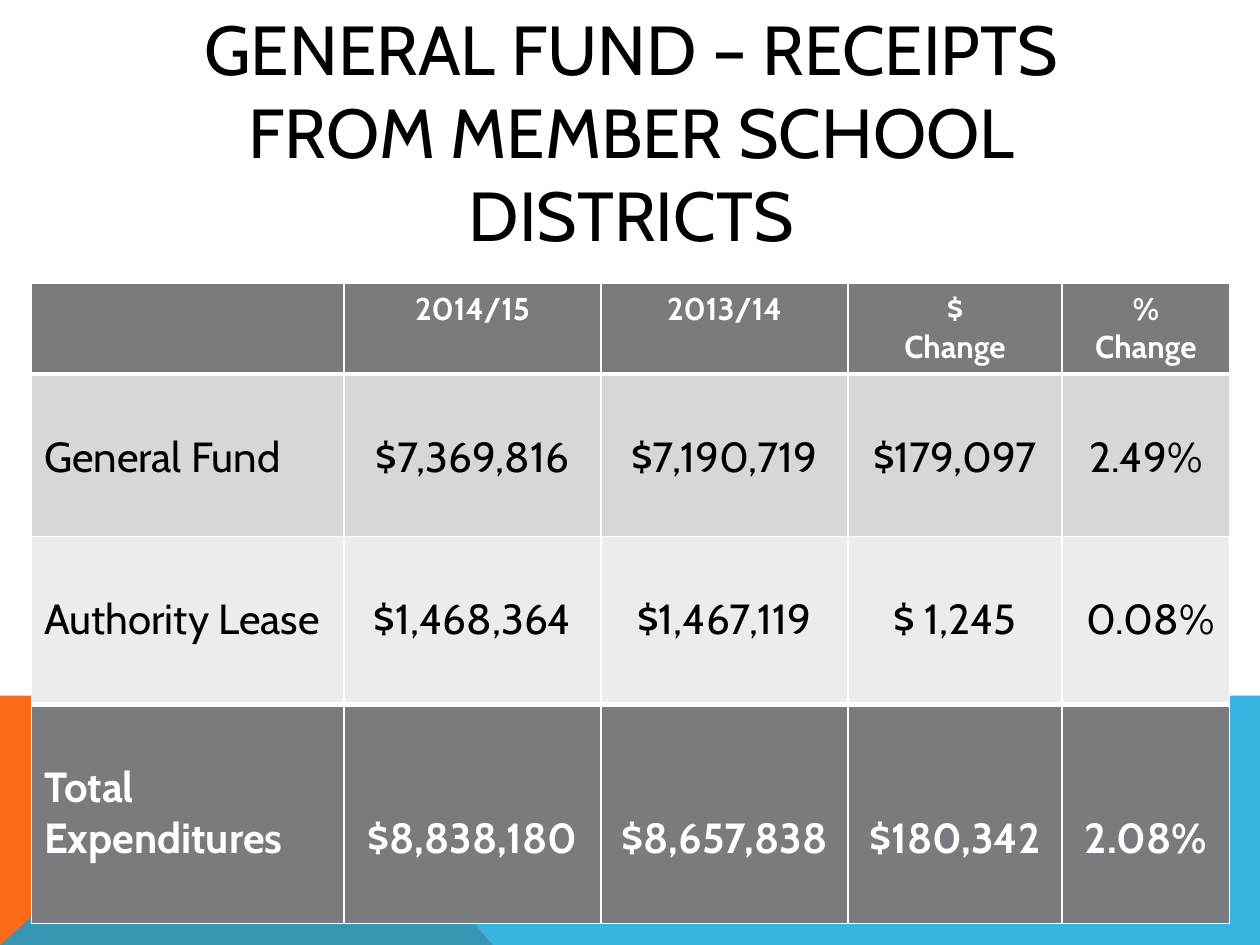
"""Build the slide on general fund receipts from member school districts."""
from lxml.etree import SubElement
from pptx import Presentation
from pptx.dml.color import RGBColor
from pptx.enum.text import MSO_ANCHOR, MSO_AUTO_SIZE, PP_ALIGN
from pptx.oxml.ns import qn
from pptx.util import Inches, Pt

FONT = "Cabin"
BLACK = RGBColor(0x00, 0x00, 0x00)
WHITE = RGBColor(0xFF, 0xFF, 0xFF)
ORANGE = RGBColor(0xF9, 0x6A, 0x1B)
BLUE = RGBColor(0x08, 0xA1, 0xD9)
DARK_GRAY = RGBColor(0x79, 0x7B, 0x7E)
MID_GRAY = RGBColor(0xD7, 0xD7, 0xD8)
LIGHT_GRAY = RGBColor(0xEC, 0xEC, 0xEC)

WIDTH, HEIGHT = 10, 7.5
BAND_TOP, BAND_PEAK, BAND_FOOT = 5.52, 2.23, 3.91
COLUMN_WIDTHS = [2.48, 2.04, 1.96, 1.7, 1.33]
ROW_HEIGHTS = [0.72, 1.29, 1.33, 1.74]
ROW_FILLS = [DARK_GRAY, MID_GRAY, LIGHT_GRAY, DARK_GRAY]
CELL_MARGIN, LINE_HEIGHT = 0.05, 0.405
RECEIPTS = [
    ["", "2014/15", "2013/14", "$\nChange", "%\nChange"],
    ["General Fund", "$7,369,816", "$7,190,719", "$179,097", "2.49%"],
    ["Authority Lease", "$1,468,364", "$1,467,119", "$ 1,245", " 0.08%"],
    ["Total Expenditures", "$8,838,180", "$8,657,838", "$180,342", "2.08%"],
]


def write_text(frame, text, size, color, bold=False, align=PP_ALIGN.CENTER):
    """Write text into a frame, one paragraph a line, in one format."""
    frame.text = text
    for paragraph in frame.paragraphs:
        paragraph.alignment = align
        font = paragraph.font
        for run in paragraph.runs:
            font = run.font
            font.name, font.size, font.bold = FONT, Pt(size), bold
            font.color.rgb = color


def add_band(slide, points, color, opacity=100):
    """Add a borderless polygon through points given in inches."""
    start, *others = [(Inches(x), Inches(y)) for x, y in points]
    builder = slide.shapes.build_freeform(*start)
    builder.add_line_segments(others, close=True)
    shape = builder.convert_to_shape()
    shape.shadow.inherit = False
    shape.line.fill.background()
    shape.fill.solid()
    shape.fill.fore_color.rgb = color
    if opacity < 100:
        color_element = shape.fill._xPr.find(qn("a:solidFill"))[0]
        SubElement(color_element, qn("a:alpha"), val=str(opacity * 1000))


def add_borders(cell, **widths):
    """Draw white borders on a cell, 1 point wide unless given by side."""
    properties = cell._tc.get_or_add_tcPr()
    for side in "LRTB":
        width = Pt(widths.get(side, 1))
        line = SubElement(properties, qn(f"a:ln{side}"), w=str(width))
        fill = SubElement(line, qn("a:solidFill"))
        SubElement(fill, qn("a:srgbClr"), val=str(WHITE))


def format_cell(cell, text, row, column):
    """Fill one cell and format it by its row and column."""
    last = len(RECEIPTS) - 1
    strong = row in (0, last)
    add_borders(cell, B=3 if row in (0, last - 1) else 1,
                T=3 if row in (1, last) else 1)
    cell.fill.solid()
    cell.fill.fore_color.rgb = ROW_FILLS[row]
    lines_above = 0 if row == 0 else 2 if row == last and column else 1
    cell.margin_top = Inches(CELL_MARGIN + lines_above * LINE_HEIGHT)
    write_text(cell.text_frame, text, size=24 if row else 18,
               color=WHITE if strong else BLACK, bold=strong,
               align=PP_ALIGN.CENTER if column else PP_ALIGN.LEFT)


def add_receipts_table(slide):
    """Add the table of receipts."""
    table = slide.shapes.add_table(
        len(ROW_HEIGHTS), len(COLUMN_WIDTHS), Inches(0.25), Inches(2.25),
        Inches(sum(COLUMN_WIDTHS)), Inches(sum(ROW_HEIGHTS))).table
    for column, width in zip(table.columns, COLUMN_WIDTHS):
        column.width = Inches(width)
    for row, height in zip(table.rows, ROW_HEIGHTS):
        row.height = Inches(height)
    for row, texts in enumerate(RECEIPTS):
        for column, text in enumerate(texts):
            format_cell(table.cell(row, column), text, row, column)


def place_title(slide, text):
    """Place and format the title placeholder."""
    title = slide.shapes.title
    title.left, title.top = Inches(0.9), Inches(0.4)
    title.width, title.height = Inches(8.22), Inches(1.27)
    frame = title.text_frame
    frame.word_wrap = True
    frame.auto_size = MSO_AUTO_SIZE.NONE
    frame.vertical_anchor = MSO_ANCHOR.MIDDLE
    write_text(frame, text, size=39.6, color=BLACK)


def main():
    """Build and save the presentation."""
    presentation = Presentation()
    presentation.slide_width = Inches(WIDTH)
    presentation.slide_height = Inches(HEIGHT)
    slide = presentation.slides.add_slide(presentation.slide_layouts[5])
    add_band(slide, [(0, HEIGHT), (0, BAND_TOP), (BAND_PEAK, BAND_TOP),
                     (BAND_FOOT, HEIGHT)], ORANGE)
    add_band(slide, [(0, HEIGHT), (BAND_PEAK, BAND_TOP), (WIDTH, BAND_TOP),
                     (WIDTH, HEIGHT)], BLUE, opacity=80)
    place_title(slide, "GENERAL FUND – RECEIPTS FROM MEMBER SCHOOL DISTRICTS")
    add_receipts_table(slide)
    presentation.save("out.pptx")


if __name__ == "__main__":
    main()
